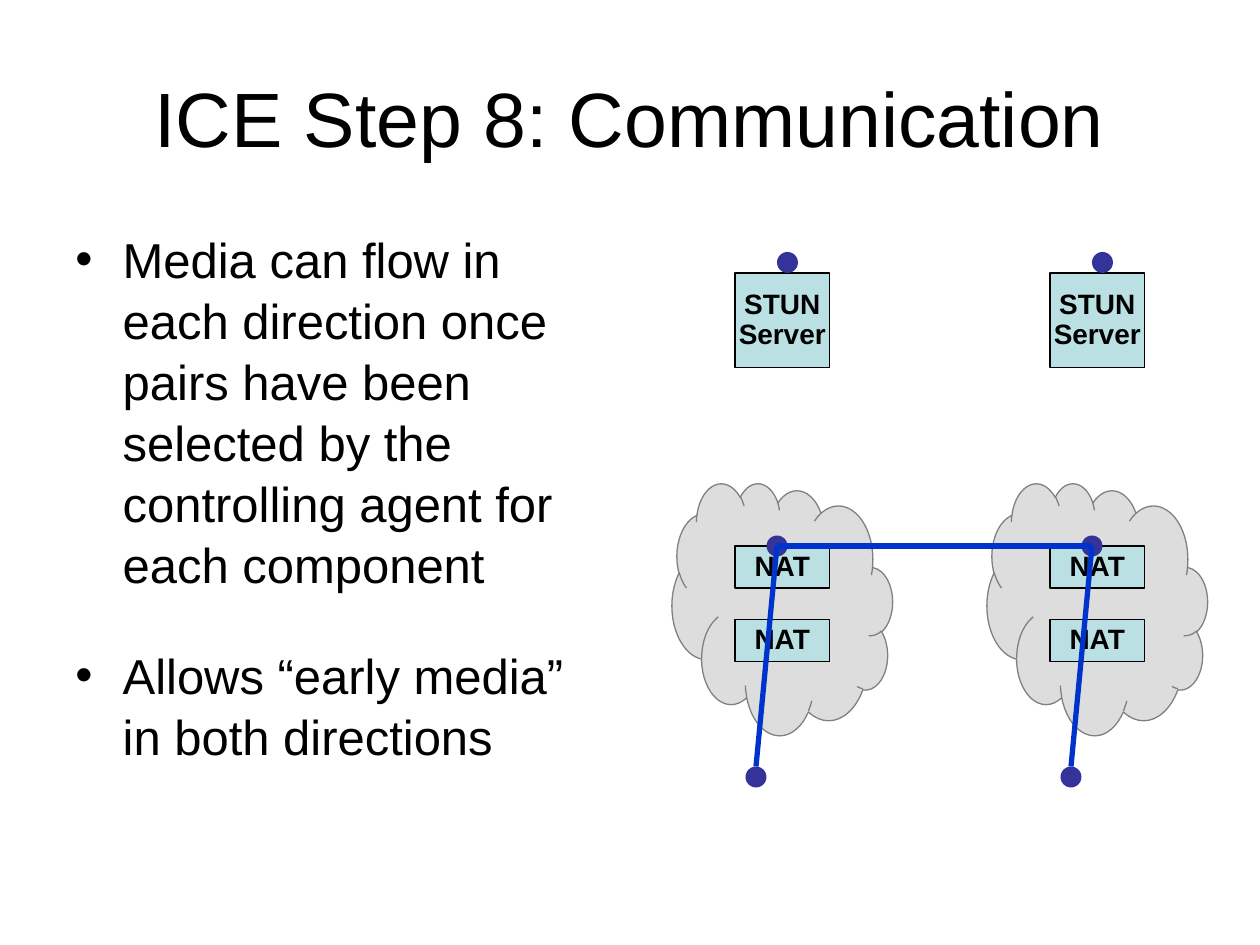
from dataclasses import dataclass

from lxml import etree
from pptx import Presentation
from pptx.dml.color import RGBColor
from pptx.enum import shapes, text
from pptx.oxml import ns
from pptx.util import Pt

FONT = "Arial"
COLOURS = {
    "text": "000000",
    "cloud": "DDDDDD",
    "cloud_edge": "808080",
    "box": "BBE0E3",
    "endpoint": "333399",
    "media": "0033CC",
}
COLUMN_PITCH = 180
PUBLIC_PORT = (444, 312)
HOST = (432, 438)


@dataclass(frozen=True)
class Box:
    label: str
    top: float
    height: float
    left: float = 420
    width: float = 54


@dataclass(frozen=True)
class Endpoint:
    left: float
    top: float
    size: float = 12


BOXES = [
    Box("STUN\nServer", 156, 54),
    Box("NAT", 312, 24),
    Box("NAT", 354, 24),
]
ENDPOINTS = [Endpoint(426, 438), Endpoint(438, 306), Endpoint(444, 144)]
BULLETS = [
    "Media can flow in each direction once pairs have been selected "
    "by the controlling agent for each component",
    "Allows “early media” in both directions",
]


def colour(name: str) -> RGBColor:
    return RGBColor.from_string(COLOURS[name])


def style_text(paragraph, size: float, bold: bool = False) -> None:
    for run in paragraph.runs:
        run.font.name = FONT
        run.font.size = Pt(size)
        run.font.bold = bold
        run.font.color.rgb = colour("text")


def add_filled(parent, kind, left, top, width, height, fill, edge=None):
    shape = parent.add_shape(kind, Pt(left), Pt(top), Pt(width), Pt(height))
    shape.shadow.inherit = False
    shape.fill.solid()
    shape.fill.fore_color.rgb = colour(fill)
    if edge:
        shape.line.color.rgb = colour(edge)
        shape.line.width = Pt(0.75)
    else:
        shape.line.fill.background()
    return shape


def add_box(parent, box: Box, offset: float) -> None:
    shape = add_filled(parent, shapes.MSO_SHAPE.RECTANGLE, box.left + offset,
                       box.top, box.width, box.height, "box", "text")
    frame = shape.text_frame
    frame.text = box.label
    frame.word_wrap = False
    frame.vertical_anchor = text.MSO_ANCHOR.MIDDLE
    frame.margin_left = frame.margin_right = Pt(6.5)
    frame.margin_top = frame.margin_bottom = Pt(3)
    for paragraph in frame.paragraphs:
        paragraph.alignment = text.PP_ALIGN.CENTER
        paragraph.line_spacing = 0.9
        style_text(paragraph, 16, bold=True)


def add_network(slide, offset: float) -> None:
    """Draw one agent's side: cloud, servers, NATs and endpoints."""
    network = slide.shapes.add_group_shape().shapes
    cloud = add_filled(network, shapes.MSO_SHAPE.CLOUD, 384 + offset, 276,
                       126, 144, "cloud", "cloud_edge")
    cloud._element.spPr.find(ns.qn("a:xfrm")).set("flipH", "1")
    for box in BOXES:
        add_box(network, box, offset)
    for dot in ENDPOINTS:
        add_filled(network, shapes.MSO_SHAPE.OVAL, dot.left + offset, dot.top,
                   dot.size, dot.size, "endpoint")


def add_media_path(slide, start, end) -> None:
    line = slide.shapes.add_connector(
        shapes.MSO_CONNECTOR.STRAIGHT, *(Pt(v) for v in (*start, *end)))
    line.line.color.rgb = colour("media")
    line.line.width = Pt(3)
    etree.SubElement(line._element.spPr, ns.qn("a:effectLst"))


def add_title(slide) -> None:
    title = slide.shapes.add_textbox(Pt(36), Pt(21.6), Pt(648), Pt(90))
    frame = title.text_frame
    frame.word_wrap = True
    frame.vertical_anchor = text.MSO_ANCHOR.MIDDLE
    frame.text = "ICE Step 8: Communication"
    frame.paragraphs[0].alignment = text.PP_ALIGN.CENTER
    style_text(frame.paragraphs[0], 44)


def add_bullets(slide) -> None:
    body = slide.shapes.add_textbox(Pt(36), Pt(126), Pt(317.5), Pt(356.4))
    frame = body.text_frame
    frame.word_wrap = True
    frame.text = "\n".join(BULLETS)
    for index, paragraph in enumerate(frame.paragraphs):
        paragraph.line_spacing = 1.04
        paragraph.space_before = Pt(28 if index else 0)
        style_text(paragraph, 28)
        properties = paragraph._p.get_or_add_pPr()
        properties.set("marL", str(Pt(27)))
        properties.set("indent", str(Pt(-27)))
        etree.SubElement(properties, ns.qn("a:buFont"), typeface=FONT)
        etree.SubElement(properties, ns.qn("a:buChar"), char="•")


def main() -> None:
    deck = Presentation()
    deck.slide_width, deck.slide_height = Pt(720), Pt(540)
    slide = deck.slides.add_slide(deck.slide_layouts[6])
    add_title(slide)
    add_bullets(slide)

    offsets = (0, COLUMN_PITCH)
    for offset in offsets:
        add_network(slide, offset)
    ports = [(PUBLIC_PORT[0] + offset, PUBLIC_PORT[1]) for offset in offsets]
    for port, offset in zip(ports, offsets):
        add_media_path(slide, port, (HOST[0] + offset, HOST[1]))
    add_media_path(slide, *ports)
    deck.save("out.pptx")


if __name__ == "__main__":
    main()
